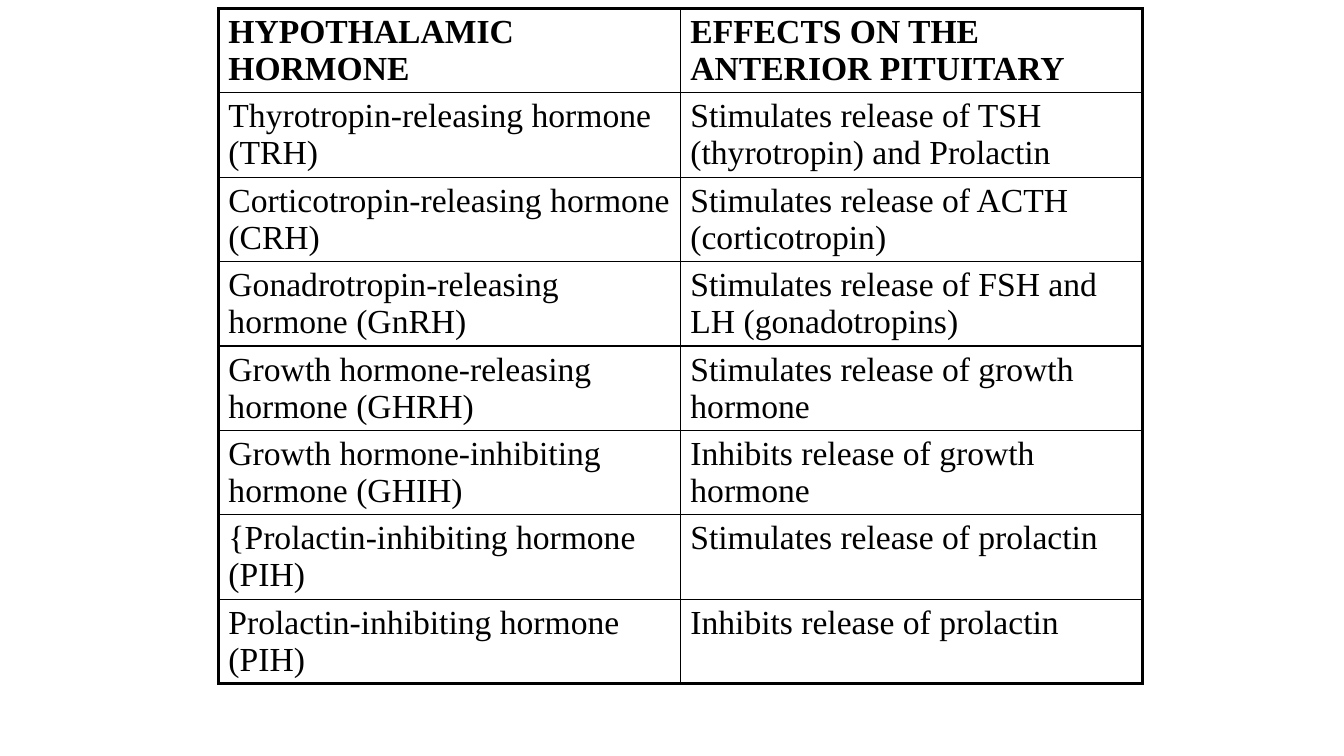
from lxml.etree import SubElement
from pptx import Presentation
from pptx.dml.color import RGBColor
from pptx.oxml.ns import qn
from pptx.util import Pt

BLACK = RGBColor(0x00, 0x00, 0x00)
FONT = "Times New Roman"
THIN, THICK = Pt(1), Pt(2.25)

HORMONES = [
    ("HYPOTHALAMIC HORMONE", "EFFECTS ON THE ANTERIOR PITUITARY"),
    ("Thyrotropin-releasing hormone (TRH)", "Stimulates release of TSH (thyrotropin) and Prolactin"),
    ("Corticotropin-releasing hormone (CRH)", "Stimulates release of ACTH (corticotropin)"),
    ("Gonadrotropin-releasing hormone (GnRH)", "Stimulates release of FSH and LH (gonadotropins)"),
    ("Growth hormone-releasing hormone (GHRH)", "Stimulates release of growth hormone"),
    ("Growth hormone-inhibiting hormone (GHIH)", "Inhibits release of growth hormone"),
    ("{Prolactin-inhibiting hormone (PIH)", "Stimulates release of prolactin"),
    ("Prolactin-inhibiting hormone (PIH)", "Inhibits release of prolactin"),
]


def set_borders(cell, outer_sides):
    """Draw the four cell borders, thick on the table's outer sides."""
    properties = cell._tc.get_or_add_tcPr()
    for side in "LRTB":
        width = THICK if side in outer_sides else THIN
        line = SubElement(properties, qn(f"a:ln{side}"), w=str(width))
        fill = SubElement(line, qn("a:solidFill"))
        SubElement(fill, qn("a:srgbClr"), val=str(BLACK))


def format_cell(cell, text, bold):
    """Fill a cell with its text, without a background."""
    cell.text = text
    cell.fill.background()
    font = cell.text_frame.paragraphs[0].runs[0].font
    font.name, font.size, font.bold = FONT, Pt(24), bold
    font.color.rgb = BLACK


def add_hormone_table(page, left, top, width, height):
    """Place the table of hormones and effects in the given box."""
    row_count, column_count = len(HORMONES), len(HORMONES[0])
    frame = page.shapes.add_table(row_count, column_count, left, top, width, height)
    table = frame.table
    table.horz_banding = False
    for row_index, texts in enumerate(HORMONES):
        for column_index, text in enumerate(texts):
            cell = table.cell(row_index, column_index)
            outer_sides = "L" if column_index == 0 else "R"
            if row_index == 0:
                outer_sides += "T"
            elif row_index == row_count - 1:
                outer_sides += "B"
            set_borders(cell, outer_sides)
            format_cell(cell, text, bold=row_index == 0)


def main():
    """Build the slide and save the deck."""
    deck = Presentation()
    deck.slide_width, deck.slide_height = Pt(960), Pt(540)
    page = deck.slides.add_slide(deck.slide_layouts[6])
    add_hormone_table(page, Pt(156), Pt(6), Pt(660), Pt(482.4))
    deck.save("out.pptx")


if __name__ == "__main__":
    main()
